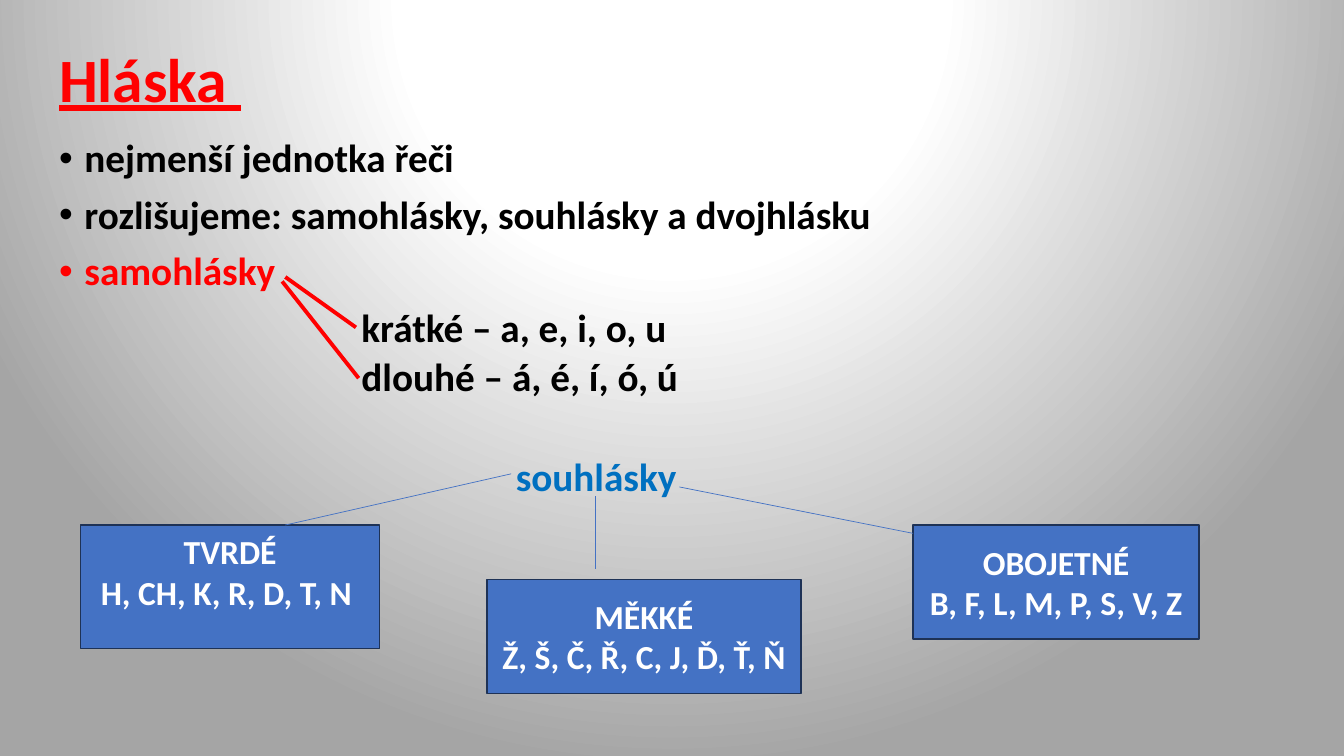
from lxml import etree
from pptx import Presentation
from pptx.dml.color import RGBColor
from pptx.enum.shapes import MSO_CONNECTOR as Link, MSO_SHAPE as Form
from pptx.enum.text import MSO_ANCHOR as Anchor, PP_ALIGN as Align
from pptx.oxml import parse_xml
from pptx.oxml.ns import qn
from pptx.util import Cm, Pt

RED = RGBColor(0xFF, 0x00, 0x00)
BLACK = RGBColor(0x00, 0x00, 0x00)
WHITE = RGBColor(0xFF, 0xFF, 0xFF)
SKY = RGBColor(0x00, 0x70, 0xC0)
BLUE = RGBColor(0x44, 0x72, 0xC4)
NAVY = RGBColor(0x1E, 0x32, 0x56)
GRAY = RGBColor(0xA5, 0xA5, 0xA5)

deck = Presentation()
deck.slide_width, deck.slide_height = Cm(33.87), Cm(19.05)
slide = deck.slides.add_slide(deck.slide_layouts[6])
shapes = slide.shapes


def write(para, text, color, **form):
    run = para.add_run()
    run.text = text
    run.font.color.rgb = color
    for key, value in {"name": "Calibri", "bold": True, **form}.items():
        setattr(run.font, key, value)


def frame(box, anchor):
    text = box.text_frame
    for key, value in {"word_wrap": True, "vertical_anchor": anchor}.items():
        setattr(text, key, value)
    return text


# Background: round glow from the top edge
fill = slide.background.fill
fill.gradient()
grad = slide.background._cSld.find(".//" + qn("a:gradFill"))
for part in list(grad):
    grad.remove(part)
stops = "".join(
    f'<a:gs pos="{pos * 1000}"><a:srgbClr val="{color}"/></a:gs>'
    for pos, color in [(0, WHITE), (35, WHITE), (100, GRAY)])
glow = parse_xml(
    '<a:gradFill xmlns:a="http://schemas.openxmlformats.org/drawingml/2006/main">'
    f'<a:gsLst>{stops}</a:gsLst><a:path path="circle">'
    '<a:fillToRect l="50000" t="-80000" r="50000" b="180000"/>'
    '</a:path></a:gradFill>')
for part in list(glow):
    grad.append(part)

# Title
title = shapes.add_textbox(Cm(1.24), Cm(0.23), Cm(29.21), Cm(3.68))
para = frame(title, Anchor.MIDDLE).paragraphs[0]
para.line_spacing = 0.9
write(para, "Hláska ", RED, size=Pt(44), underline=True)

# Body: text, colour, indent in cm, space before in points, bullet
rows = [
    ("nejmenší jednotka řeči", BLACK, 0.64, 10, True),
    ("rozlišujeme: samohlásky, souhlásky a dvojhlásku", BLACK, 0.64, 10, True),
    ("samohlásky", RED, 0.64, 10, True),
    ("krátké – a, e, i, o, u", BLACK, 7.62, 10, False),
    ("dlouhé – á, é, í, ó, ú", BLACK, 7.62, 5, False),
    ("souhlásky", SKY, 11.51, 41, False),
]
body = shapes.add_textbox(Cm(1.24), Cm(3.38), Cm(32.28), Cm(15.44))
text = frame(body, Anchor.TOP)
for i, (words, color, left, gap, dot) in enumerate(rows):
    para = text.add_paragraph() if i else text.paragraphs[0]
    para.line_spacing, para.space_before = 0.9, Pt(gap)
    props = para._p.get_or_add_pPr()
    props.set("marL", str(Cm(left)))
    props.set("indent", str(-Cm(left) if dot else 0))
    if dot:
        etree.SubElement(props, qn("a:buFont")).set("typeface", "Arial")
        etree.SubElement(props, qn("a:buChar")).set("char", "•")
    write(para, words, color, size=Pt(28))

# Consonant boxes: place, lower inset, heading, letters
boxes = [
    ((2.03, 13.23, 7.54, 3.12), 0.9, "TVRDÉ", "H, CH, K, R, D, T, N "),
    ((12.27, 14.6, 7.92, 2.87), 0.13, "MĚKKÉ", "Ž, Š, Č, Ř, C, J, Ď, Ť, Ň"),
    ((23.01, 13.23, 7.21, 2.87), 0.13, "OBOJETNÉ", "B, F, L, M, P, S, V, Z"),
]
for place, inset, *lines in boxes:
    box = shapes.add_shape(Form.RECTANGLE, *map(Cm, place))
    box.shadow.inherit = False
    box.fill.solid()
    box.fill.fore_color.rgb = BLUE
    box.line.color.rgb, box.line.width = NAVY, Pt(1)
    text = frame(box, Anchor.MIDDLE)
    text.margin_bottom = Cm(inset)
    for i, words in enumerate(lines):
        para = text.add_paragraph() if i else text.paragraphs[0]
        para.alignment = Align.CENTER
        write(para, words, WHITE, size=Pt(24))

# Branch lines: vowels in red, consonants in blue
links = [
    ((7.19, 6.98, 8.97, 8.25), RED, 2.75),
    ((7.11, 7.09, 9.04, 9.53), RED, 2.75),
    ((12.88, 11.94, 7.19, 13.23), BLUE, 0.5),
    ((15.01, 12.5, 15.01, 14.35), BLUE, 0.5),
    ((17.12, 12.27, 23.01, 13.44), BLUE, 0.5),
]
for ends, color, width in links:
    link = shapes.add_connector(Link.STRAIGHT, *map(Cm, ends))
    link.line.color.rgb, link.line.width = color, Pt(width)
    etree.SubElement(link._element.spPr, qn("a:effectLst"))

deck.save("out.pptx")
